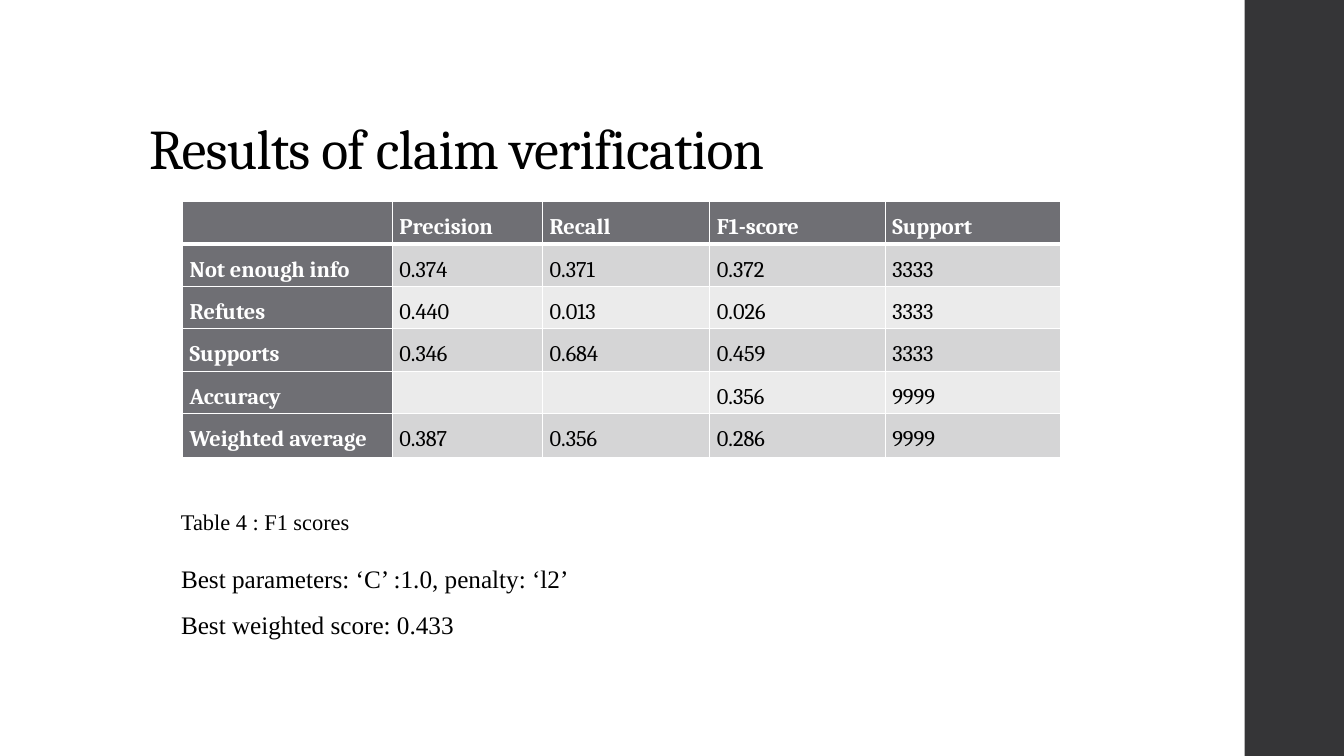
from lxml import etree
from pptx import Presentation
from pptx.dml.color import RGBColor
from pptx.enum.shapes import MSO_SHAPE
from pptx.enum.text import MSO_ANCHOR, PP_ALIGN
from pptx.oxml.ns import qn
from pptx.util import Pt

RECT = MSO_SHAPE.RECTANGLE
TOP, BOTTOM = MSO_ANCHOR.TOP, MSO_ANCHOR.BOTTOM
LEFT, JUSTIFY = PP_ALIGN.LEFT, PP_ALIGN.JUSTIFY

BLACK = RGBColor(0, 0, 0)
WHITE = RGBColor(0xFF, 0xFF, 0xFF)
DARK = RGBColor(0x35, 0x35, 0x37)
HEAD = RGBColor(0x6F, 0x6F, 0x74)
BANDS = [RGBColor(0xEB, 0xEB, 0xEB), RGBColor(0xD5, 0xD5, 0xD6)]

SERIF = "Cambria"
ROMAN = "Times New Roman"

WIDE, HIGH = 960, 540
COLS = [149.8, 107.3, 119.5, 125.3, 125.3]
ROWS = [30.3] * 5 + [31.6]
SCORES = [
    ["", "Precision", "Recall", "F1-score", "Support"],
    ["Not enough info", "0.374", "0.371", "0.372", "3333"],
    ["Refutes", "0.440", "0.013", "0.026", "3333"],
    ["Supports", "0.346", "0.684", "0.459", "3333"],
    ["Accuracy", "", "", "0.356", "9999"],
    ["Weighted average", "0.387", "0.356", "0.286", "9999"],
]


def write(frame, text, font=SERIF, size=16, color=BLACK, bold=False,
          align=JUSTIFY, lead=1.5, track=0):
    """Fill a text frame, one paragraph per line of text."""
    for i, line in enumerate(text.split("\n")):
        para = frame.add_paragraph() if i else frame.paragraphs[0]
        para.alignment = align
        para.line_spacing = lead
        run = para.add_run()
        run.text = line
        run.font.name = font
        run.font.size = Pt(size)
        run.font.bold = bold
        run.font.color.rgb = color
        if track:
            run.font._element.set("spc", str(round(track * 100)))


def add_text(slide, box, text, anchor=TOP, **style):
    frame = slide.shapes.add_textbox(*map(Pt, box)).text_frame
    frame.word_wrap = True
    frame.vertical_anchor = anchor
    write(frame, text, **style)


def add_band(slide, box):
    band = slide.shapes.add_shape(RECT, *map(Pt, box))
    band.shadow.inherit = False
    band.fill.solid()
    band.fill.fore_color.rgb = DARK
    band.line.fill.background()


def edge(cell, base):
    """Draw white cell borders, with the given width at the bottom."""
    props = cell._tc.get_or_add_tcPr()
    sides = [("lnL", 1), ("lnR", 1), ("lnT", 1), ("lnB", base)]
    for i, (side, width) in enumerate(sides):
        line = etree.Element(qn("a:" + side), w=str(Pt(width)))
        fill = etree.SubElement(line, qn("a:solidFill"))
        etree.SubElement(fill, qn("a:srgbClr"), val=str(WHITE))
        props.insert(i, line)


def add_scores(slide, left, top):
    box = (left, top, sum(COLS), sum(ROWS))
    table = slide.shapes.add_table(
        len(ROWS), len(COLS), *map(Pt, box)).table
    for col, width in zip(table.columns, COLS):
        col.width = Pt(width)
    for r, (height, values) in enumerate(zip(ROWS, SCORES)):
        table.rows[r].height = Pt(height)
        for c, value in enumerate(values):
            cell = table.cell(r, c)
            head = r == 0 or c == 0
            cell.margin_left = cell.margin_right = Pt(5)
            cell.margin_top = cell.margin_bottom = 0
            cell.fill.solid()
            cell.fill.fore_color.rgb = HEAD if head else BANDS[r % 2]
            edge(cell, 1 if r else 3)
            if value:
                write(cell.text_frame, value, bold=head,
                      color=WHITE if head else BLACK)


def add_notes(slide, left, top):
    """Place the table caption and the best results below it."""
    add_text(slide, (left, top, 665.3, 33.1), "Table 4 : F1 scores",
             font=ROMAN)
    add_text(slide, (left, top + 38.2, 346.3, 94.3),
             "Best parameters: ‘C’ :1.0, penalty: ‘l2’\n"
             "Best weighted score: 0.433", font=ROMAN, size=18)


def main():
    deck = Presentation()
    deck.slide_width, deck.slide_height = Pt(WIDE), Pt(HIGH)
    slide = deck.slides.add_slide(deck.slide_layouts[6])
    add_band(slide, (889, 0, WIDE - 889, HIGH))
    add_text(slide, (99.4, 28.8, 763.2, 104.4),
             "Results of claim verification", anchor=BOTTOM, size=40,
             align=LEFT, lead=0.9, track=-0.5)
    add_scores(slide, 130.5, 144)
    add_notes(slide, 122.2, 350)
    deck.save("out.pptx")


if __name__ == "__main__":
    main()
